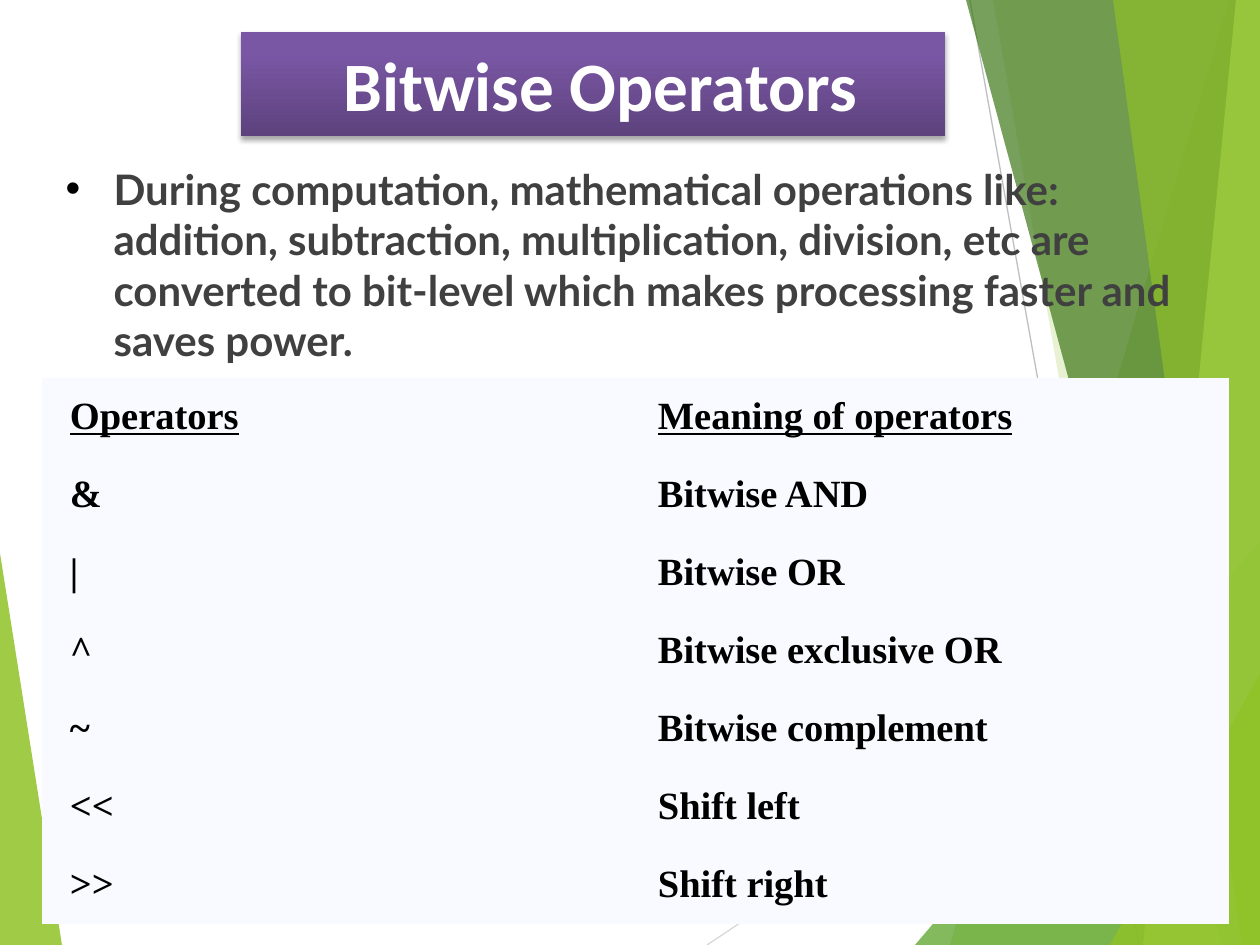
from dataclasses import dataclass

from lxml import etree
from pptx import Presentation
from pptx.dml.color import RGBColor
from pptx.enum.shapes import MSO_CONNECTOR
from pptx.enum.text import MSO_ANCHOR, MSO_AUTO_SIZE, PP_ALIGN
from pptx.oxml.ns import qn
from pptx.util import Emu, Pt

STRAIGHT = MSO_CONNECTOR.STRAIGHT
MIDDLE, TOP = MSO_ANCHOR.MIDDLE, MSO_ANCHOR.TOP
CENTER, LEFT = PP_ALIGN.CENTER, PP_ALIGN.LEFT
NO_AUTOFIT = MSO_AUTO_SIZE.NONE

EMU_PER_PX = 914400 / 126
WIDTH, HEIGHT = 1260, 945
PLAIN_TABLE_STYLE = "{2D5ABB26-0587-4C30-8999-92F81FD0307C}"


@dataclass(frozen=True)
class TextStyle:
    name: str
    size: float
    color: str


@dataclass(frozen=True)
class Theme:
    title: TextStyle = TextStyle("Calibri", 39.6, "FFFFFF")
    body: TextStyle = TextStyle("Lato", 24, "404040")
    table: TextStyle = TextStyle("Times New Roman", 22, "000000")
    title_stops: tuple = ((0, "5D427D"), (80, "7A57A5"), (100, "7A56A7"))
    shadow: str = "000000"
    bullet: str = "000000"
    cell: str = "F8FAFF"
    lime: str = "90C226"
    green: str = "54A021"
    forest: str = "3F7819"
    pale: str = "C0E474"
    light_line: str = "D9D9D9"
    gray_line: str = "BFBFBF"


THEME = Theme()


@dataclass(frozen=True)
class Facet:
    points: tuple
    color: str
    opacity: int


@dataclass(frozen=True)
class Ray:
    start: tuple
    end: tuple
    color: str


RAYS = (
    Ray((707, HEIGHT), (WIDTH, 576), THEME.light_line),
    Ray((970, 0), (1139, HEIGHT), THEME.gray_line),
)
LEFT_FACET = Facet(((0, 553), (62, HEIGHT), (0, HEIGHT)), THEME.lime, 85)
RIGHT_FACETS = tuple(
    Facet((*edge, (WIDTH, HEIGHT), (WIDTH, top)), color, opacity)
    for edge, top, color, opacity in (
        (((1229, 0), (950, HEIGHT)), 0, THEME.lime, 30),
        (((993, 0), (1158, HEIGHT)), 0, THEME.lime, 20),
        (((915, HEIGHT),), 541, THEME.green, 72),
        (((966, 0), (1222, HEIGHT)), 0, THEME.forest, 70),
        (((1236, 0), (1143, HEIGHT)), 0, THEME.pale, 70),
        (((1113, 0), (1242, HEIGHT)), 0, THEME.lime, 65),
        (((1110, HEIGHT),), 674, THEME.lime, 80),
    )
)
OPERATORS = (
    ("Operators", "Meaning of operators"),
    ("&", "Bitwise AND"),
    ("|", "Bitwise OR"),
    ("^", "Bitwise exclusive OR"),
    ("~", "Bitwise complement"),
    ("<<", "Shift left"),
    (">>", "Shift right"),
)
COLUMN_WIDTHS = (588, 599)
ROW_HEIGHT = 78


def px(length: int) -> Emu:
    return Emu(round(length * EMU_PER_PX))


def set_all(target, values: dict) -> None:
    for name, value in values.items():
        setattr(target, name, value)


def add_xml(parent, tag: str, **attributes):
    return etree.SubElement(parent, qn(tag), attributes)


def add_color(parent, color: str, opacity: int = 100) -> None:
    element = add_xml(parent, "a:srgbClr", val=color)
    if opacity < 100:
        add_xml(element, "a:alpha", val=str(opacity * 1000))


def style_font(font, style: TextStyle, underline: bool = False) -> None:
    set_all(font, {"name": style.name, "size": Pt(style.size), "bold": True, "underline": underline})
    font.color.rgb = RGBColor.from_string(style.color)


def draw_facet(slide, facet: Facet) -> None:
    builder = slide.shapes.build_freeform(*facet.points[0], scale=EMU_PER_PX)
    builder.add_line_segments(facet.points[1:], close=True)
    shape = builder.convert_to_shape()
    shape.shadow.inherit = False
    shape.line.fill.background()
    shape.fill.solid()
    shape.fill.fore_color.rgb = RGBColor.from_string(facet.color)
    color = shape._element.spPr.find(qn("a:solidFill")).find(qn("a:srgbClr"))
    add_xml(color, "a:alpha", val=str(facet.opacity * 1000))


def draw_ray(slide, ray: Ray) -> None:
    connector = slide.shapes.add_connector(STRAIGHT, *map(px, ray.start + ray.end))
    connector.line.width = Pt(0.75)
    connector.line.color.rgb = RGBColor.from_string(ray.color)
    add_xml(connector._element.spPr, "a:effectLst")


def fill_placeholder(slide, shape, box: tuple, text: str, style: TextStyle, frame: dict, paragraph_format: dict):
    """Bring the placeholder to the front, fill it and return its paragraph."""
    slide.shapes._spTree.append(shape._element)
    set_all(shape, dict(zip(("left", "top", "width", "height"), map(px, box))))
    shape.text_frame.text = text
    set_all(shape.text_frame, {"word_wrap": True, "auto_size": NO_AUTOFIT, **frame})
    paragraph = shape.text_frame.paragraphs[0]
    set_all(paragraph, {"space_before": Pt(0), **paragraph_format})
    style_font(paragraph.runs[0].font, style)
    return paragraph


def draw_title(slide) -> None:
    shape = slide.shapes.title
    fill_placeholder(
        slide, shape, (241, 32, 704, 104), "Bitwise Operators", THEME.title,
        {"vertical_anchor": MIDDLE, "margin_left": px(28)}, {"alignment": CENTER},
    )
    shape.fill.gradient()
    shape.fill.gradient_angle = 90
    properties = shape._element.spPr
    stops = properties.find(qn("a:gradFill")).find(qn("a:gsLst"))
    for stop in list(stops):
        stops.remove(stop)
    for position, color in THEME.title_stops:
        add_color(add_xml(stops, "a:gs", pos=str(position * 1000)), color)
    shape.shadow.inherit = False
    shadow = add_xml(
        properties.find(qn("a:effectLst")), "a:outerShdw",
        blurRad=str(Pt(3.1)), dist=str(Pt(1.8)), dir="5400000", rotWithShape="0",
    )
    add_color(shadow, THEME.shadow, 35)


def draw_body(slide) -> None:
    paragraph = fill_placeholder(
        slide, slide.placeholders[1], (53, 157, 1134, 179),
        "During computation, mathematical operations like: addition, subtraction, "
        "multiplication, division, etc are converted to bit-level which makes "
        "processing faster and saves power.",
        THEME.body, {"vertical_anchor": TOP}, {"alignment": LEFT},
    )
    properties = paragraph._p.get_or_add_pPr()
    properties.set("marL", str(px(48)))
    properties.set("indent", str(px(-48)))
    add_color(add_xml(properties, "a:buClr"), THEME.bullet)
    add_xml(properties, "a:buFont", typeface="Arial")
    add_xml(properties, "a:buChar", char="•")


def draw_table(slide) -> None:
    box = (42, 378, sum(COLUMN_WIDTHS), ROW_HEIGHT * len(OPERATORS))
    table = slide.shapes.add_table(len(OPERATORS), len(COLUMN_WIDTHS), *map(px, box)).table
    set_all(table, {"first_row": False, "horz_banding": False})
    table._tbl.tblPr.find(qn("a:tableStyleId")).text = PLAIN_TABLE_STYLE
    for column, width in zip(table.columns, COLUMN_WIDTHS):
        column.width = px(width)
    cell_format = {
        "vertical_anchor": MIDDLE, "margin_left": px(28), "margin_right": px(28),
        "margin_top": px(14), "margin_bottom": px(14),
    }
    for row_index, texts in enumerate(OPERATORS):
        for column_index, text in enumerate(texts):
            cell = table.cell(row_index, column_index)
            cell.text = text
            set_all(cell, cell_format)
            cell.fill.solid()
            cell.fill.fore_color.rgb = RGBColor.from_string(THEME.cell)
            style_font(cell.text_frame.paragraphs[0].runs[0].font, THEME.table, row_index == 0)


def main() -> None:
    presentation = Presentation()
    set_all(presentation, {"slide_width": px(WIDTH), "slide_height": px(HEIGHT)})
    slide = presentation.slides.add_slide(presentation.slide_layouts[1])
    draw_facet(slide, LEFT_FACET)
    for ray in RAYS:
        draw_ray(slide, ray)
    for facet in RIGHT_FACETS:
        draw_facet(slide, facet)
    draw_title(slide)
    draw_body(slide)
    draw_table(slide)
    presentation.save("out.pptx")


if __name__ == "__main__":
    main()
